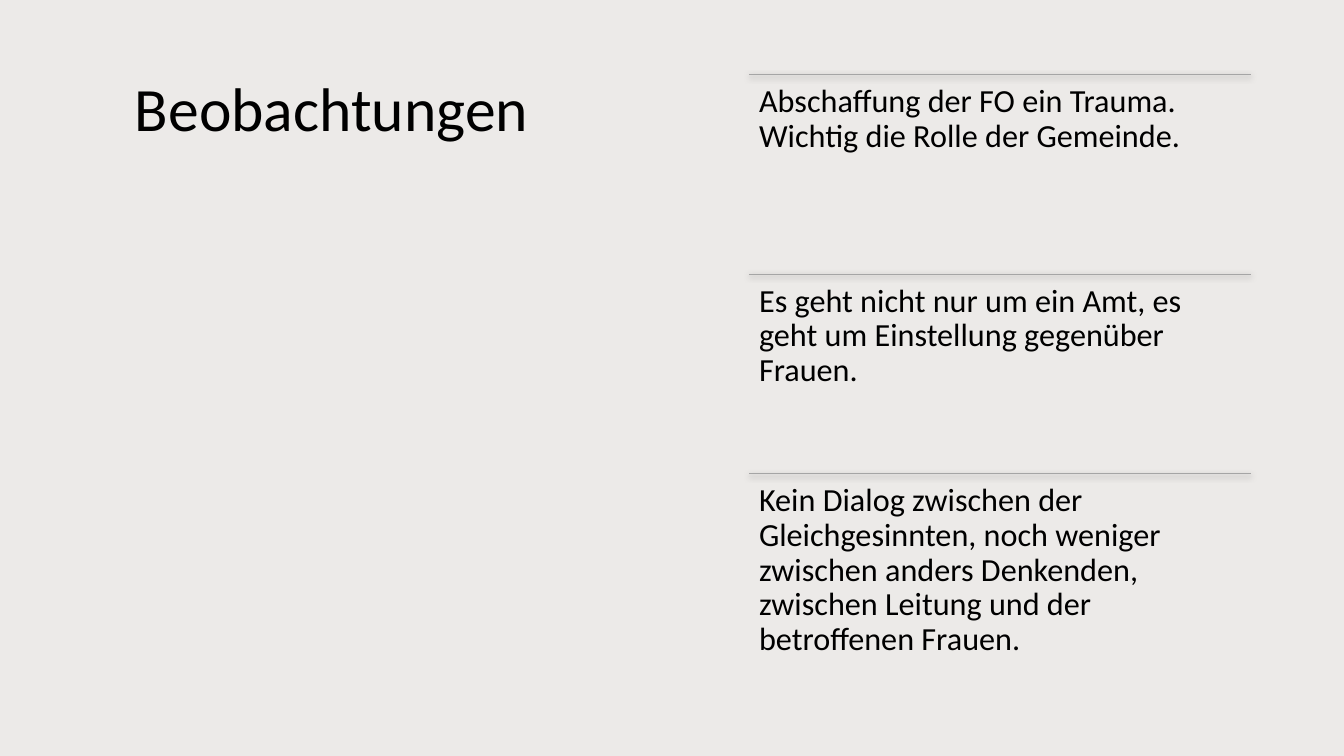
from lxml import etree
from pptx import Presentation
from pptx.dml.color import RGBColor
from pptx.enum.shapes import MSO_CONNECTOR, MSO_SHAPE
from pptx.enum.text import MSO_ANCHOR
from pptx.oxml import parse_xml
from pptx.oxml.ns import qn
from pptx.util import Inches, Pt

STRAIGHT = MSO_CONNECTOR.STRAIGHT
RECTANGLE = MSO_SHAPE.RECTANGLE
TOP = MSO_ANCHOR.TOP

# Content
TITLE = "Beobachtungen"
OBSERVATIONS = [
    "Abschaffung der FO ein Trauma. Wichtig die Rolle der Gemeinde.",
    "Es geht nicht nur um ein Amt, es geht um Einstellung gegenüber Frauen.",
    "Kein Dialog zwischen der Gleichgesinnten, noch weniger zwischen anders "
    "Denkenden, zwischen Leitung und der betroffenen Frauen.",
]

# Style and grid, in inches and points
FONT, BLACK, RULE_GREY, TINT = "Calibri", "000000", "A5A5A5", "82766A"
TINT_PERCENT = 15
WIDTH, HEIGHT = 13.33, 7.5
TITLE_BOX = (1.24, 0.73, 5.12, 2.35)
LIST_LEFT, LIST_TOP, LIST_WIDTH, ROW_HEIGHT = 7.43, 0.74, 4.98, 1.98
RULE_SHADOW = (
    '<a:effectLst xmlns:a="http://schemas.openxmlformats.org/drawingml/2006/main">'
    '<a:outerShdw blurRad="57150" dist="19050" dir="5400000" algn="ctr" rotWithShape="0">'
    '<a:srgbClr val="000000"><a:alpha val="63000"/></a:srgbClr>'
    '</a:outerShdw></a:effectLst>'
)


def color(value):
    return RGBColor.from_string(value)


def add_text(page, text, area, size, margins, space_after=0):
    box = page.shapes.add_textbox(*map(Inches, area))
    frame = box.text_frame
    frame.word_wrap = True
    frame.vertical_anchor = TOP
    frame.margin_left = frame.margin_right = Inches(margins[0])
    frame.margin_top = frame.margin_bottom = Inches(margins[1])
    frame.text = text
    para = frame.paragraphs[0]
    para.line_spacing = 0.9
    para.space_after = Pt(space_after)
    font = para.runs[0].font
    font.name, font.size = FONT, Pt(size)
    font.color.rgb = color(BLACK)


def add_rule(page, top):
    left, right, height = map(Inches, (LIST_LEFT, LIST_LEFT + LIST_WIDTH, top))
    rule = page.shapes.add_connector(STRAIGHT, left, height, right, height)
    rule.line.color.rgb = color(RULE_GREY)
    rule.line.width = Pt(0.5)
    rule._element.spPr.append(parse_xml(RULE_SHADOW))


def main():
    deck = Presentation()
    deck.slide_width, deck.slide_height = Inches(WIDTH), Inches(HEIGHT)
    page = deck.slides.add_slide(deck.slide_layouts[6])

    # Translucent tint over the whole page
    tint = page.shapes.add_shape(RECTANGLE, 0, 0, deck.slide_width, deck.slide_height)
    tint.shadow.inherit = False
    tint.fill.solid()
    tint.fill.fore_color.rgb = color(TINT)
    tint.line.fill.background()
    shade = tint._element.spPr.find(qn("a:solidFill"))[0]
    etree.SubElement(shade, qn("a:alpha")).set("val", str(TINT_PERCENT * 1000))

    # Title
    add_text(page, TITLE, TITLE_BOX, 44, (0.1, 0.05))

    # Observations, each under a rule
    for row, text in enumerate(OBSERVATIONS):
        top = LIST_TOP + row * ROW_HEIGHT
        add_rule(page, top)
        add_text(page, text, (LIST_LEFT, top, LIST_WIDTH, ROW_HEIGHT), 23, (0.1, 0.1), 8)

    deck.save("out.pptx")


if __name__ == "__main__":
    main()
